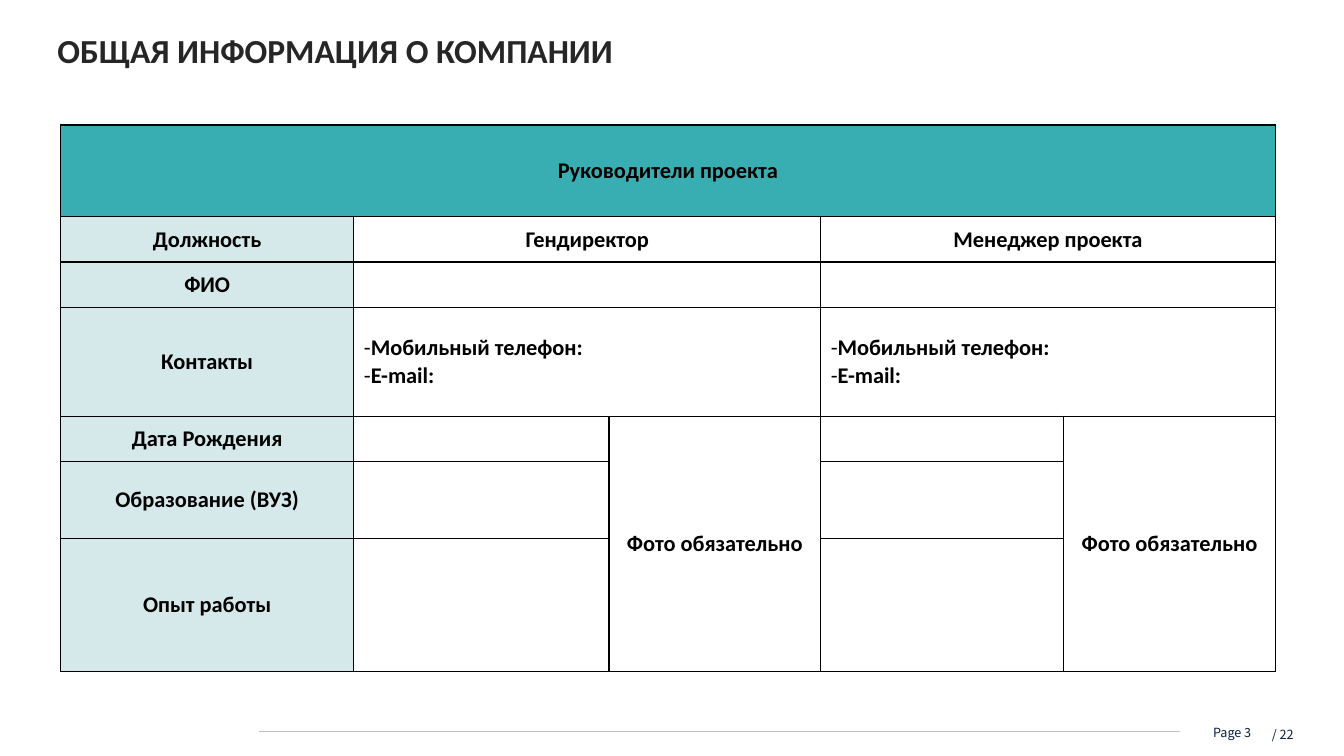
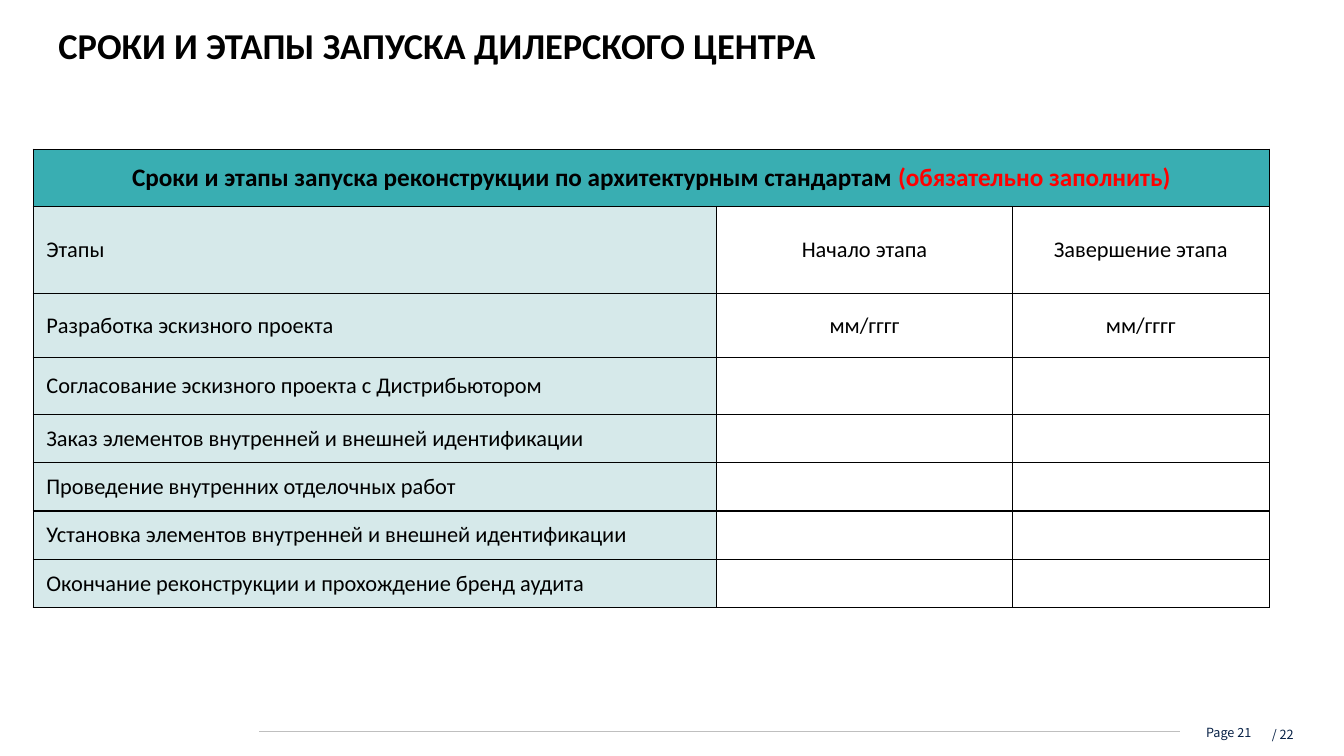
from dataclasses import dataclass

from lxml.etree import SubElement
from pptx import Presentation
from pptx.dml.color import RGBColor
from pptx.enum.shapes import MSO_CONNECTOR
from pptx.enum.text import MSO_ANCHOR, MSO_AUTO_SIZE, PP_ALIGN
from pptx.oxml.ns import qn
from pptx.util import Emu, Pt


@dataclass(frozen=True)
class Theme:
    """Colours, fonts and type sizes shared by every slide."""
    black: str = "000000"
    charcoal: str = "262626"
    navy: str = "072146"
    red: str = "FF0000"
    teal: str = "39AEB2"
    pale_teal: str = "D6E9EA"
    white: str = "FFFFFF"
    rule: str = "BFBFBF"
    font: str = "Calibri"
    footer_font: str = "Noto Sans CJK SC"
    cell_size: int = 16
    footer_size: int = 9


THEME = Theme()
PX_PER_INCH = 100
PAGE_SIZE = (1333, 750)
PAGE_TOTAL = 22
FOOTER_RULE = (257, 726, 1170, 726)
PAGE_NUMBER_BOX = (1105, 719, 136, 24)
PAGE_TOTAL_BOX = (1246, 721, 37, 24)

CONTACTS = ("Мобильный телефон:", "E-mail:")
PHOTO = "Фото обязательно"

SLIDES = [
    {
        "number": 3,
        "title": {"text": "ОБЩАЯ ИНФОРМАЦИЯ О КОМПАНИИ", "box": (47, 29, 1218, 62),
                  "size": 24, "color": THEME.charcoal, "spacing": 0.9},
        "table": {
            "origin": (60, 124),
            "columns": [291, 253, 210, 241, 210],
            "heights": [91, 45, 45, 108, 45, 76, 132],
            "margins": (10, 3),
            "header": [("Руководители проекта", THEME.black)],
            "header_size": 16,
            "bold": True,
            "label_align": PP_ALIGN.CENTER,
            "rows": [
                ["Должность", "Гендиректор", "", "Менеджер проекта", ""],
                ["ФИО", "", "", "", ""],
                ["Контакты", CONTACTS, "", CONTACTS, ""],
                ["Дата Рождения", "", PHOTO, "", PHOTO],
                ["Образование (ВУЗ)", "", "", "", ""],
                ["Опыт работы", "", "", "", ""],
            ],
            "merges": [(row, column, row, column + 1) for row in (1, 2, 3) for column in (1, 3)]
                      + [(4, column, 6, column) for column in (2, 4)],
        },
    },
    {
        "number": 21,
        "title": {"text": "СРОКИ И ЭТАПЫ ЗАПУСКА ДИЛЕРСКОГО ЦЕНТРА", "box": (48, 18, 787, 54),
                  "size": 26, "color": THEME.black, "spacing": 1.0},
        "table": {
            "origin": (33, 148),
            "columns": [678, 293, 255],
            "heights": [57, 86, 64, 56, 48, 48, 48, 48],
            "margins": (13, 5),
            "header": [
                ("Сроки и этапы запуска реконструкции по архитектурным стандартам ", THEME.black),
                ("(обязательно заполнить)", THEME.red),
            ],
            "header_size": 18,
            "bold": False,
            "label_align": PP_ALIGN.LEFT,
            "rows": [
                ["Этапы", "Начало этапа", "Завершение этапа"],
                ["Разработка эскизного проекта", "мм/гггг", "мм/гггг"],
                ["Согласование эскизного проекта с Дистрибьютором", "", ""],
                ["Заказ элементов внутренней и внешней идентификации", "", ""],
                ["Проведение внутренних отделочных работ", "", ""],
                ["Установка элементов внутренней и внешней идентификации", "", ""],
                ["Окончание реконструкции и прохождение бренд аудита", "", ""],
            ],
            "merges": [],
        },
    },
]


def px(*lengths):
    return [Emu(length * 914400 // PX_PER_INCH) for length in lengths]


def add_span(para, text, size, color, bold=False, font=THEME.font):
    span = para.add_run()
    span.text = text
    span.font.name = font
    span.font.size = Pt(size)
    span.font.bold = bold
    span.font.color.rgb = RGBColor.from_string(color)


def add_title(page, title):
    box = page.shapes.title
    box.left, box.top, box.width, box.height = px(*title["box"])
    frame = box.text_frame
    frame.word_wrap = True
    frame.auto_size = MSO_AUTO_SIZE.NONE
    frame.vertical_anchor = MSO_ANCHOR.TOP
    para = frame.paragraphs[0]
    para.alignment = PP_ALIGN.LEFT
    para.line_spacing = title["spacing"]
    add_span(para, title["text"], title["size"], title["color"], bold=True)


def add_footer(page, number):
    rule = page.shapes.add_connector(MSO_CONNECTOR.STRAIGHT, *px(*FOOTER_RULE))
    rule.line.color.rgb = RGBColor.from_string(THEME.rule)
    rule.line.width = Pt(0.5)
    SubElement(rule.element.spPr, qn("a:effectLst"))
    for text, place in ((f"Page {number}", PAGE_NUMBER_BOX), (f"/ {PAGE_TOTAL}", PAGE_TOTAL_BOX)):
        frame = page.shapes.add_textbox(*px(*place)).text_frame
        frame.word_wrap = True
        frame.margin_left = frame.margin_right = frame.margin_top = frame.margin_bottom = 0
        para = frame.paragraphs[0]
        para.alignment = PP_ALIGN.RIGHT
        add_span(para, text, THEME.footer_size, THEME.navy, font=THEME.footer_font)


def style_cell(cell, color, margins):
    properties = cell._tc.get_or_add_tcPr()
    for side in ("lnL", "lnR", "lnT", "lnB"):
        line = SubElement(properties, qn(f"a:{side}"), w=str(Pt(1)))
        fill = SubElement(line, qn("a:solidFill"))
        SubElement(fill, qn("a:srgbClr"), val=THEME.black)
    cell.fill.solid()
    cell.fill.fore_color.rgb = RGBColor.from_string(color)
    cell.vertical_anchor = MSO_ANCHOR.MIDDLE
    side_margin, end_margin = px(*margins)
    cell.margin_left = cell.margin_right = side_margin
    cell.margin_top = cell.margin_bottom = end_margin


def write_bullets(cell, items, bold):
    frame = cell.text_frame
    for index, item in enumerate(items):
        para = frame.add_paragraph() if index else frame.paragraphs[0]
        properties = para._p.get_or_add_pPr()
        properties.set("marL", "0")
        properties.set("indent", "0")
        SubElement(properties, qn("a:buFont"), typeface=THEME.font)
        SubElement(properties, qn("a:buChar"), char="-")
        add_span(para, item, THEME.cell_size, THEME.black, bold)


def write_line(cell, spans, size, align, bold):
    para = cell.text_frame.paragraphs[0]
    para.alignment = align
    for text, color in spans:
        add_span(para, text, size, color, bold)


def add_grid(page, content):
    columns, heights = content["columns"], content["heights"]
    place = px(*content["origin"], sum(columns), sum(heights))
    grid = page.shapes.add_table(len(heights), len(columns), *place).table
    grid.first_row = grid.horz_banding = False
    for column, width in zip(grid.columns, px(*columns)):
        column.width = width
    for row, height in zip(grid.rows, px(*heights)):
        row.height = height
    for row in range(len(heights)):
        for column in range(len(columns)):
            color = THEME.teal if row == 0 else THEME.white if column else THEME.pale_teal
            style_cell(grid.cell(row, column), color, content["margins"])
    for top, left, bottom, right in [(0, 0, 0, len(columns) - 1), *content["merges"]]:
        grid.cell(top, left).merge(grid.cell(bottom, right))
    write_line(grid.cell(0, 0), content["header"], content["header_size"], PP_ALIGN.CENTER, True)
    for row, values in enumerate(content["rows"], 1):
        for column, value in enumerate(values):
            cell = grid.cell(row, column)
            if isinstance(value, tuple):
                write_bullets(cell, value, content["bold"])
            elif value:
                align = PP_ALIGN.CENTER if column else content["label_align"]
                write_line(cell, [(value, THEME.black)], THEME.cell_size, align, content["bold"])


def main():
    deck = Presentation()
    deck.slide_width, deck.slide_height = px(*PAGE_SIZE)
    for content in SLIDES:
        page = deck.slides.add_slide(deck.slide_layouts[5])
        add_footer(page, content["number"])
        add_grid(page, content["table"])
        add_title(page, content["title"])
    deck.save("out.pptx")


if __name__ == "__main__":
    main()
